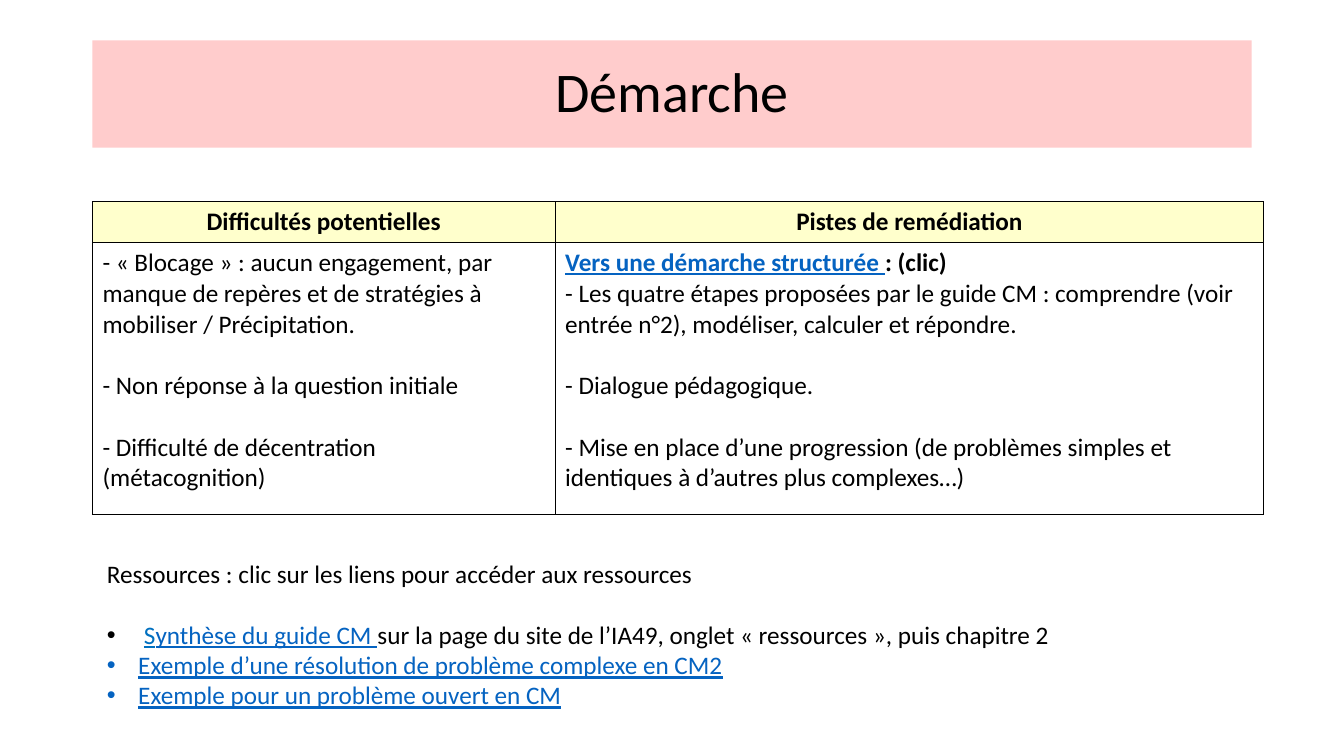
import pptx
import pptx.dml.color
import pptx.enum.text
import pptx.oxml
import pptx.oxml.ns
import pptx.util
from pptx.util import Cm

RGBColor = pptx.dml.color.RGBColor
BLACK = RGBColor(0x00, 0x00, 0x00)
WHITE = RGBColor(0xFF, 0xFF, 0xFF)
PINK = RGBColor(0xFF, 0xCC, 0xCC)
CREAM = RGBColor(0xFF, 0xFF, 0xCC)
LINK = RGBColor(0x05, 0x63, 0xC1)
BLUE = RGBColor(0x00, 0x70, 0xC0)

CENTER = pptx.enum.text.PP_ALIGN.CENTER
LEFT = pptx.enum.text.PP_ALIGN.LEFT
MIDDLE = pptx.enum.text.MSO_ANCHOR.MIDDLE
TOP = pptx.enum.text.MSO_ANCHOR.TOP
NONE = pptx.enum.text.MSO_AUTO_SIZE.NONE
NS = pptx.oxml.ns.nsdecls("a")

# Each paragraph is (runs, gap before?); each run is (text, style).
PLAIN = {}
BOLD = {"bold": True}
URL = {"color": LINK, "line": True}

HEADS = ["Difficultés potentielles", "Pistes de remédiation"]
ISSUES = [
    ([("- « Blocage » : aucun engagement, par manque de repères et de "
       "stratégies à mobiliser / Précipitation.", PLAIN)], False),
    ([("- Non réponse à la question initiale", PLAIN)], True),
    ([("- Difficulté de décentration (métacognition)", PLAIN)], True),
]
HINTS = [
    ([("Vers une démarche structurée ", {**URL, **BOLD}),
      (": (clic)", BOLD)], False),
    ([("- Les quatre étapes proposées par le guide CM : comprendre (voir "
       "entrée n°2), modéliser, calculer et répondre.", PLAIN)], False),
    ([("- Dialogue pédagogique.", PLAIN)], True),
    ([("- Mise en place d’une progression (de problèmes simples et "
       "identiques à d’autres plus complexes…)", PLAIN)], True),
]
INTRO = ([("Ressources : clic sur les liens pour accéder aux ressources",
           PLAIN)], False)
LINKS = [
    ([(" ", PLAIN), ("S", {"color": BLUE, "line": True}),
      ("ynthèse du guide CM ", URL),
      ("sur la page du site de l’IA49, onglet « ressources », "
       "puis chapitre 2", PLAIN)], True),
    ([("Exemple d’une résolution de problème complexe en CM2", URL)], False),
    ([("Exemple pour un problème ouvert en CM", URL)], False),
]


class Deck:
    font = "Calibri"
    size = 18
    gap = pptx.util.Pt(22)

    def __init__(self):
        self.file = pptx.Presentation()
        self.file.slide_width = Cm(33.87)
        self.file.slide_height = Cm(19.05)
        self.slide = self.file.slides.add_slide(self.file.slide_layouts[1])

    def place(self, shape, left, top, width, height):
        shape.left, shape.top = Cm(left), Cm(top)
        shape.width, shape.height = Cm(width), Cm(height)

    def run(self, para, text, size=None, color=BLACK, bold=False, line=False):
        run = para.add_run()
        run.text = text
        font = run.font
        font.name = self.font
        font.size = pptx.util.Pt(size or self.size)
        font.color.rgb = color
        font.bold = bold
        font.underline = line

    def text(self, frame, paras, align=LEFT):
        for i, (runs, gap) in enumerate(paras):
            para = frame.add_paragraph() if i else frame.paragraphs[0]
            para.alignment = align
            para.space_before = self.gap if gap else 0
            for words, style in runs:
                self.run(para, words, **style)

    def bullet(self, para, mark, hang=0.0):
        """Set the bullet sign, or none, with a hanging indent in cm."""
        props = para._p.get_or_add_pPr()
        props.set("marL", str(Cm(hang)))
        props.set("indent", str(-Cm(hang)))
        tags = ['<a:buFont %s typeface="Arial"/>', '<a:buChar %s char="•"/>']
        for tag in tags if mark else ["<a:buNone %s/>"]:
            props.append(pptx.oxml.parse_xml(tag % NS))

    def title(self, words, box):
        shape = self.slide.shapes.title
        self.place(shape, *box)
        shape.fill.solid()
        shape.fill.fore_color.rgb = PINK
        frame = shape.text_frame
        frame.auto_size = NONE
        frame.vertical_anchor = MIDDLE
        self.text(frame, [([(words, {"size": 40})], False)], CENTER)
        frame.paragraphs[0].line_spacing = 0.9

    def list(self, intro, items, box):
        shape = self.slide.placeholders[1]
        self.place(shape, *box)
        frame = shape.text_frame
        frame.auto_size = NONE
        frame.vertical_anchor = TOP
        self.text(frame, [intro] + items)
        first, *rest = frame.paragraphs
        self.bullet(first, False)
        for para in rest:
            self.bullet(para, True, 0.79)

    def cell(self, cell, paras, fill, align, anchor):
        props = cell._tc.get_or_add_tcPr()
        for side in "LRTB":
            props.append(pptx.oxml.parse_xml(
                f'<a:ln{side} {NS} w="12700"><a:solidFill>'
                f'<a:srgbClr val="{BLACK}"/></a:solidFill></a:ln{side}>'))
        cell.fill.solid()
        cell.fill.fore_color.rgb = fill
        cell.vertical_anchor = anchor
        self.text(cell.text_frame, paras, align)

    def table(self, heads, texts, left, top, widths, heights):
        table = self.slide.shapes.add_table(
            2, len(heads), Cm(left), Cm(top),
            Cm(sum(widths)), Cm(sum(heights))).table
        table.first_row = table.horz_banding = False
        for row, height in zip(table.rows, heights):
            row.height = Cm(height)
        for i, (head, paras) in enumerate(zip(heads, texts)):
            table.columns[i].width = Cm(widths[i])
            self.cell(table.cell(0, i), [([(head, BOLD)], False)],
                      CREAM, CENTER, MIDDLE)
            self.cell(table.cell(1, i), paras, WHITE, LEFT, TOP)


def main():
    deck = Deck()
    deck.title("Démarche", (2.33, 1.02, 29.21, 2.7))
    deck.table(HEADS, [ISSUES, HINTS], 2.33, 5.08,
               (11.66, 17.86), (1.03, 6.86))
    deck.list(INTRO, LINKS, (2.44, 13.94, 29.26, 4.88))
    deck.file.save("out.pptx")


if __name__ == "__main__":
    main()
